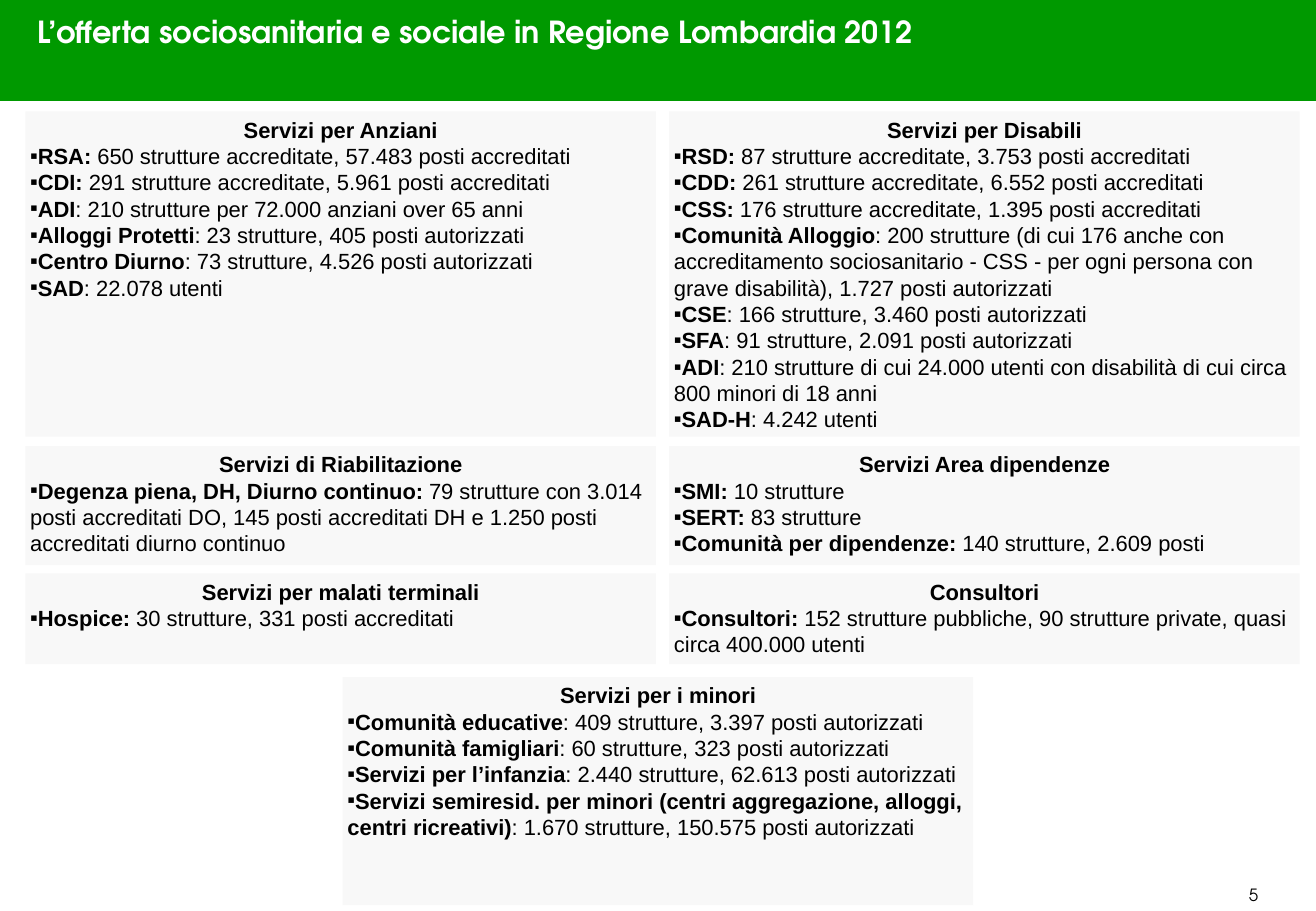
from dataclasses import dataclass

from lxml.etree import SubElement
from pptx import Presentation
from pptx.dml.color import RGBColor
from pptx.enum.shapes import MSO_SHAPE as Kind
from pptx.enum.text import MSO_ANCHOR as Anchor, PP_ALIGN as Align
from pptx.oxml.ns import qn
from pptx.util import Cm, Pt


@dataclass(frozen=True)
class Theme:
    green: str = "009900"
    pale: str = "F8F8F8"
    white: str = "FFFFFF"
    black: str = "000000"
    head_font: str = "TeX Gyre Adventor"
    body_font: str = "Arial"
    head_size: int = 18
    body_size: int = 13
    page_size: int = 10


@dataclass(frozen=True)
class Item:
    name: str
    data: str


@dataclass(frozen=True)
class Panel:
    title: str
    left: float
    row: int
    items: tuple[Item, ...]


THEME = Theme()
WIDE, HIGH = 27.51, 19.05
PANEL_W = 13.18
LEFT, RIGHT = 0.53, 13.99
MIDDLE = (WIDE - PANEL_W) / 2
ROWS = ((2.33, 6.8), (9.33, 2.49), (11.99, 1.9), (14.16, 4.77))  # top, height

PANELS = (
    Panel("Servizi per Anziani", LEFT, 0, (
        Item("RSA: ", "650 strutture accreditate, 57.483 posti accreditati"),
        Item("CDI: ", "291 strutture accreditate, 5.961 posti accreditati"),
        Item("ADI", ": 210 strutture per 72.000 anziani over 65 anni"),
        Item("Alloggi Protetti", ": 23 strutture, 405 posti autorizzati"),
        Item("Centro Diurno", ": 73 strutture, 4.526 posti autorizzati"),
        Item("SAD", ": 22.078 utenti"))),
    Panel("Servizi per Disabili", RIGHT, 0, (
        Item("RSD: ", "87 strutture accreditate, 3.753 posti accreditati"),
        Item("CDD: ", "261 strutture accreditate, 6.552 posti accreditati"),
        Item("CSS: ", "176 strutture accreditate, 1.395 posti accreditati"),
        Item("Comunità Alloggio",
             ": 200 strutture (di cui 176 anche con accreditamento "
             "sociosanitario - CSS - per ogni persona con grave disabilità), "
             "1.727 posti autorizzati"),
        Item("CSE", ": 166 strutture, 3.460 posti autorizzati"),
        Item("SFA", ": 91 strutture, 2.091 posti autorizzati"),
        Item("ADI", ": 210 strutture di cui 24.000 utenti con disabilità "
                    "di cui circa 800 minori di 18 anni"),
        Item("SAD-H", ": 4.242 utenti"))),
    Panel("Servizi di Riabilitazione", LEFT, 1, (
        Item("Degenza piena, DH, Diurno continuo: ",
             "79 strutture con 3.014 posti accreditati DO, 145 posti "
             "accreditati DH e 1.250 posti accreditati diurno continuo"),)),
    Panel("Servizi Area dipendenze", RIGHT, 1, (
        Item("SMI: ", "10 strutture"),
        Item("SERT: ", "83 strutture"),
        Item("Comunità per dipendenze: ", "140 strutture, 2.609 posti"))),
    Panel("Servizi per malati terminali", LEFT, 2, (
        Item("Hospice: ", "30 strutture, 331 posti accreditati"),)),
    Panel("Consultori", RIGHT, 2, (
        Item("Consultori:", " 152 strutture pubbliche, 90 strutture private, "
                            "quasi circa 400.000 utenti"),)),
    Panel("Servizi per i minori", MIDDLE, 3, (
        Item("Comunità educative", ": 409 strutture, 3.397 posti autorizzati"),
        Item("Comunità famigliari", ": 60 strutture, 323 posti autorizzati"),
        Item("Servizi per l’infanzia",
             ": 2.440 strutture, 62.613 posti autorizzati"),
        Item("Servizi semiresid. per minori (centri aggregazione, alloggi, "
             "centri ricreativi)",
             ": 1.670 strutture, 150.575 posti autorizzati"))),
)


def write(para, text: str, *, font: str = THEME.body_font,
          size: int = THEME.body_size, color: str = THEME.black,
          bold: bool = False) -> None:
    run = para.add_run()
    run.text = text
    run.font.name = font
    run.font.size = Pt(size)
    run.font.bold = bold
    run.font.color.rgb = RGBColor.from_string(color)


def add_box(slide, left: float, top: float, width: float, height: float,
            fill: str):
    box = slide.shapes.add_shape(
        Kind.RECTANGLE, Cm(left), Cm(top), Cm(width), Cm(height))
    box.shadow.inherit = False
    box.fill.solid()
    box.fill.fore_color.rgb = RGBColor.from_string(fill)
    box.line.fill.background()
    return box


def add_label(slide, text: str, left: float, top: float, width: float,
              height: float, align: Align, **style) -> None:
    frame = slide.shapes.add_textbox(
        Cm(left), Cm(top), Cm(width), Cm(height)).text_frame
    frame.word_wrap = True
    para = frame.paragraphs[0]
    para.alignment = align
    write(para, text, font=THEME.head_font, **style)


def add_bullet(para) -> None:
    """Hang a square bullet at the panel's left edge."""
    props = para._p.get_or_add_pPr()
    props.set("marL", "0")
    props.set("indent", str(-Cm(0.5)))
    SubElement(props, qn("a:buFont"), typeface=THEME.body_font)
    SubElement(props, qn("a:buChar"), char="▪")


def add_panel(slide, panel: Panel) -> None:
    top, height = ROWS[panel.row]
    frame = add_box(slide, panel.left, top, PANEL_W, height,
                    THEME.pale).text_frame
    frame.word_wrap = True
    frame.vertical_anchor = Anchor.TOP
    frame.margin_left = frame.margin_right = Cm(0.1)
    frame.margin_top = frame.margin_bottom = Cm(0.1)
    head = frame.paragraphs[0]
    head.alignment = Align.CENTER
    write(head, panel.title, bold=True)
    for item in panel.items:
        para = frame.add_paragraph()
        para.level = 1
        para.alignment = Align.LEFT
        add_bullet(para)
        write(para, item.name, bold=True)
        write(para, item.data)


def main() -> None:
    deck = Presentation()
    deck.slide_width, deck.slide_height = Cm(WIDE), Cm(HIGH)
    slide = deck.slides.add_slide(deck.slide_layouts[6])
    add_box(slide, 0, 0, WIDE, 2.11, THEME.green)
    add_label(slide, "5", 24.91, 18.37, 2.59, 0.69, Align.CENTER,
              size=THEME.page_size)
    add_label(slide, "L’offerta sociosanitaria e sociale in Regione Lombardia 2012",
              0.53, 0.16, 26.82, 1.02, Align.LEFT,
              size=THEME.head_size, color=THEME.white, bold=True)
    for panel in PANELS:
        add_panel(slide, panel)
    deck.save("out.pptx")


if __name__ == "__main__":
    main()
